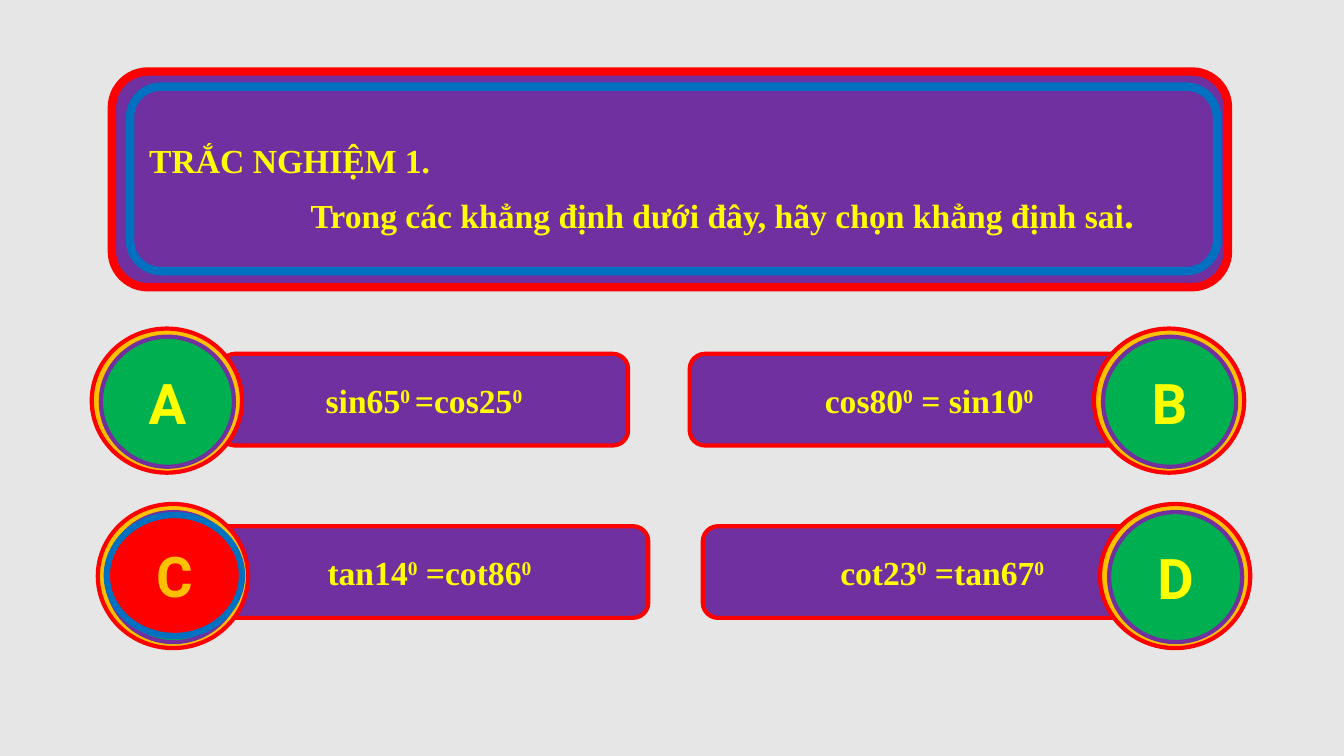
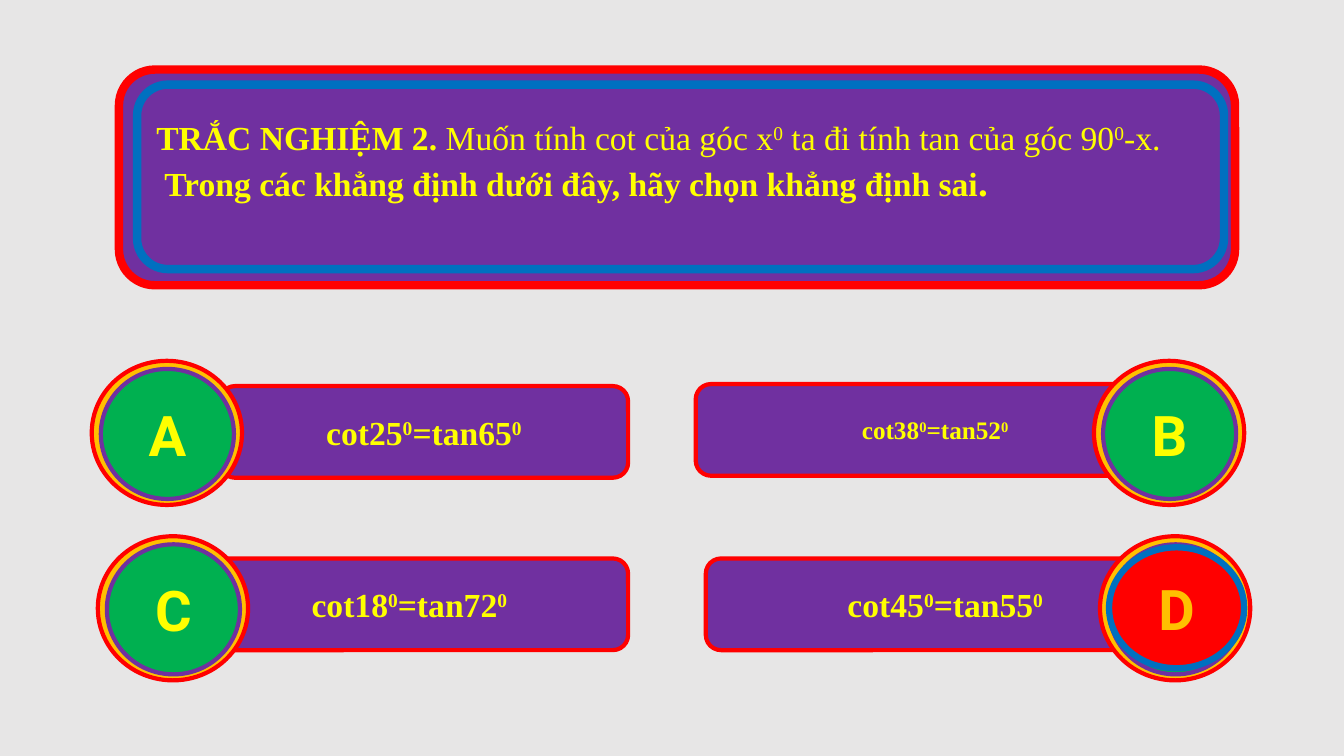
from dataclasses import dataclass

from pptx import Presentation
from pptx.dml.color import RGBColor
from pptx.enum.shapes import MSO_SHAPE
from pptx.enum.text import MSO_ANCHOR, MSO_AUTO_SIZE, PP_ALIGN
from pptx.util import Inches, Pt

GREY = RGBColor(0xE7, 0xE6, 0xE6)
PURPLE = RGBColor(0x70, 0x30, 0xA0)
RED = RGBColor(0xFF, 0x00, 0x00)
BLUE = RGBColor(0x00, 0x70, 0xC0)
GREEN = RGBColor(0x00, 0xB0, 0x50)
GOLD = RGBColor(0xFF, 0xC0, 0x00)
YELLOW = RGBColor(0xFF, 0xFF, 0x00)

BODY_FONT = {"name": "Times New Roman", "bold": True}
LETTER_FONT = {"name": "Roboto", "bold": True, "size": Pt(40)}

BAR_HEIGHT = 0.91
# Left and top of the badge for each letter, on the first quiz
BADGES = {"A": (0.91, 3.26), "B": (10.85, 3.26), "C": (0.97, 5.0), "D": (10.91, 5.0)}


@dataclass(frozen=True)
class Span:
    """Text in which each ^ switches superscript on or off."""
    text: str
    bold: bool = True
    size: int = 24


@dataclass(frozen=True)
class Line:
    spans: tuple[Span, ...]
    indent: float = 0
    space_before: float = 0


@dataclass(frozen=True)
class Answer:
    letter: str
    span: Span
    bar: tuple[float, float, float]  # left, top, width
    chosen: bool = False


@dataclass(frozen=True)
class Quiz:
    frame: tuple[float, float]  # left, top
    text_top: float
    lines: tuple[Line, ...]
    answers: tuple[Answer, ...]
    drop: float = 0  # shift of the badges


QUIZZES = (
    Quiz(
        (1.11, 0.71), 1.39,
        (
            Line((Span("TRẮC NGHIỆM 1."),)),
            Line((Span("Trong các khẳng định dưới đây, hãy chọn khẳng định sai"),
                  Span(".", size=28)), 1.6, 6.3),
        ),
        (
            Answer("A", Span("sin65^0 ^=cos25^0"), (2.18, 3.51, 4.05)),
            Answer("B", Span("cos80^0^ = sin10^0"), (6.84, 3.51, 4.75)),
            Answer("C", Span("tan14^0^ =cot86^0"), (2.09, 5.22, 4.34), True),
            Answer("D", Span("cot23^0^ =tan67^0"), (6.97, 5.22, 4.75)),
        ),
    ),
    Quiz(
        (1.18, 0.69), 1.16,
        (
            Line((Span("TRẮC NGHIỆM 2. "),
                  Span("Muốn tính cot của góc x^0^ ta đi tính tan của góc 90^0^-x.", False))),
            Line((Span("Trong các khẳng định dưới đây, hãy chọn khẳng định sai"),
                  Span(".", size=28)), 0.08),
        ),
        (
            Answer("A", Span("cot25^0^=tan65^0"), (2.18, 3.83, 4.05)),
            Answer("B", Span("cot38^0^=tan52^0", size=18), (6.9, 3.81, 4.75)),
            Answer("C", Span("cot18^0^=tan72^0"), (1.89, 5.54, 4.34)),
            Answer("D", Span("cot45^0^=tan55^0"), (7.0, 5.54, 4.75), True),
        ),
        0.32,
    ),
)


def format_font(font, style: dict, color: RGBColor) -> None:
    for name, value in style.items():
        setattr(font, name, value)
    font.color.rgb = color


def add_span(para, span: Span) -> None:
    for index, text in enumerate(span.text.split("^")):
        if not text:
            continue
        run = para.add_run()
        run.text = text
        style = BODY_FONT | {"bold": span.bold, "size": Pt(span.size)}
        format_font(run.font, style, YELLOW)
        if index % 2:
            run._r.get_or_add_rPr().set("baseline", "30000")


def add_panel(page, kind: MSO_SHAPE, place: tuple[float, float, float, float],
              fill: RGBColor, line: RGBColor, weight: float = 3):
    shape = page.shapes.add_shape(kind, *map(Inches, place))
    shape.shadow.inherit = False
    shape.fill.solid()
    shape.fill.fore_color.rgb = fill
    shape.line.color.rgb = line
    shape.line.width = Pt(weight)
    return shape


def set_frame(frame, anchor: MSO_ANCHOR, wrap: bool) -> None:
    settings = {"margin_left": 0, "margin_right": 0, "margin_top": 0, "margin_bottom": 0,
                "vertical_anchor": anchor, "word_wrap": wrap,
                "auto_size": MSO_AUTO_SIZE.NONE}
    for name, value in settings.items():
        setattr(frame, name, value)


def add_letter(disc, letter: str, color: RGBColor) -> None:
    set_frame(disc.text_frame, MSO_ANCHOR.MIDDLE, False)
    para = disc.text_frame.paragraphs[0]
    para.alignment = PP_ALIGN.CENTER
    run = para.add_run()
    run.text = letter
    format_font(run.font, LETTER_FONT, color)


def add_answer(page, answer: Answer, drop: float) -> None:
    # Bar with the formula
    left, top, width = answer.bar
    bar = add_panel(page, MSO_SHAPE.ROUNDED_RECTANGLE, (left, top, width, BAR_HEIGHT),
                    PURPLE, RED)
    set_frame(bar.text_frame, MSO_ANCHOR.MIDDLE, True)
    para = bar.text_frame.paragraphs[0]
    para.alignment = PP_ALIGN.CENTER
    add_span(para, answer.span)

    # Badge with the letter
    left, top = BADGES[answer.letter]
    top += drop
    add_panel(page, MSO_SHAPE.OVAL, (left, top, 1.49, 1.43), GOLD, RED)
    disc = add_panel(page, MSO_SHAPE.OVAL, (left + 0.09, top + 0.08, 1.32, 1.29),
                     GREEN, PURPLE)
    color = YELLOW
    if answer.chosen:
        disc = add_panel(page, MSO_SHAPE.OVAL, (left + 0.09, top + 0.11, 1.34, 1.2),
                         RED, BLUE, 4.5)
        color = GOLD
    add_letter(disc, answer.letter, color)


def add_question(page, quiz: Quiz) -> None:
    # Double frame
    left, top = quiz.frame
    for place, line in (((left, top, 11.07, 2.14), RED),
                        ((left + 0.18, top + 0.15, 10.78, 1.83), BLUE)):
        add_panel(page, MSO_SHAPE.ROUNDED_RECTANGLE, place, PURPLE, line, 6)

    # Title, brought in front of the frame
    title = page.shapes.title
    page.shapes.element.append(title.element)
    title.left, title.top = Inches(left + 0.37), Inches(quiz.text_top)
    title.width, title.height = Inches(10.4), Inches(1.1)
    frame = title.text_frame
    set_frame(frame, MSO_ANCHOR.TOP, True)
    for index, line in enumerate(quiz.lines):
        para = frame.add_paragraph() if index else frame.paragraphs[0]
        para.alignment = PP_ALIGN.LEFT
        para.line_spacing = 1.0
        para.space_before = Pt(line.space_before)
        para._p.get_or_add_pPr().set("marL", str(Inches(line.indent)))
        for span in line.spans:
            add_span(para, span)


def main() -> None:
    deck = Presentation()
    deck.slide_width, deck.slide_height = Inches(13.33), Inches(7.5)
    background = deck.slide_master.background.fill
    background.solid()
    background.fore_color.rgb = GREY
    for quiz in QUIZZES:
        page = deck.slides.add_slide(deck.slide_layouts[5])
        for answer in quiz.answers:
            add_answer(page, answer, quiz.drop)
        add_question(page, quiz)
    deck.save("out.pptx")


if __name__ == "__main__":
    main()
